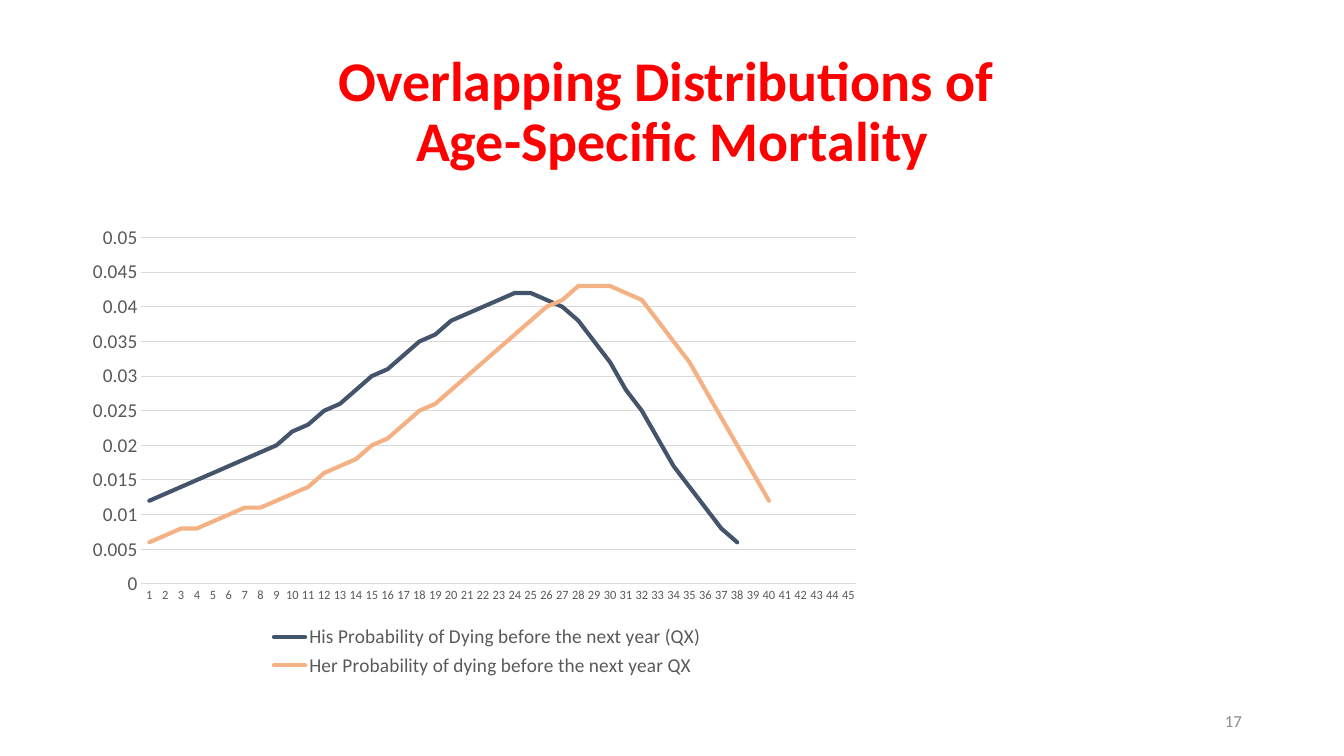
from dataclasses import dataclass

from lxml.etree import SubElement
from pptx import Presentation
from pptx.chart.data import CategoryChartData
from pptx.dml.color import RGBColor
from pptx.enum.chart import XL_CHART_TYPE, XL_LEGEND_POSITION, XL_TICK_MARK
from pptx.enum.text import MSO_ANCHOR, MSO_AUTO_SIZE, PP_ALIGN
from pptx.oxml.ns import qn
from pptx.util import Cm, Pt

FONT = "Calibri"
COLORS = {
    "title": "FF0000",
    "label": "595959",
    "grid": "D9D9D9",
    "page": "8C8C8C",
    "his": "44546A",
    "her": "F4B183",
}
AGES = range(1, 46)


@dataclass
class Curve:
    name: str
    color: str
    values: list[float]


CURVES = [
    Curve("His Probability of Dying before the next year (QX)", "his", [
        0.012, 0.013, 0.014, 0.015, 0.016, 0.017, 0.018, 0.019, 0.02, 0.022,
        0.023, 0.025, 0.026, 0.028, 0.03, 0.031, 0.033, 0.035, 0.036, 0.038,
        0.039, 0.04, 0.041, 0.042, 0.042, 0.041, 0.04, 0.038, 0.035, 0.032,
        0.028, 0.025, 0.021, 0.017, 0.014, 0.011, 0.008, 0.006]),
    Curve("Her Probability of dying before the next year QX", "her", [
        0.006, 0.007, 0.008, 0.008, 0.009, 0.01, 0.011, 0.011, 0.012, 0.013,
        0.014, 0.016, 0.017, 0.018, 0.02, 0.021, 0.023, 0.025, 0.026, 0.028,
        0.03, 0.032, 0.034, 0.036, 0.038, 0.04, 0.041, 0.043, 0.043, 0.043,
        0.042, 0.041, 0.038, 0.035, 0.032, 0.028, 0.024, 0.02, 0.016, 0.012]),
]


def rgb(name: str) -> RGBColor:
    return RGBColor.from_string(COLORS[name])


def style(font, size: float, color: str, bold: bool = False) -> None:
    font.name = FONT
    font.size = Pt(size)
    font.bold = bold
    font.color.rgb = rgb(color)


def write(shape, text: str, *, size: float, color: str, align: PP_ALIGN,
          bold: bool = False, spacing: float = 1.0) -> None:
    frame = shape.text_frame
    frame.word_wrap = True
    frame.auto_size = MSO_AUTO_SIZE.NONE
    frame.vertical_anchor = MSO_ANCHOR.MIDDLE
    para = frame.paragraphs[0]
    para.text = text
    para.alignment = align
    para.line_spacing = spacing
    for run in para.runs:
        style(run.font, size, color, bold)


def rule(line, color: str, width: float) -> None:
    line.color.rgb = rgb(color)
    line.width = Pt(width)


def place(chart, x: float, y: float, w: float, h: float) -> None:
    """Fix the inner plot area as fractions of the chart."""
    plot = chart._chartSpace.chart.plotArea
    for old in plot.findall(qn("c:layout")):
        plot.remove(old)
    layout = SubElement(plot, qn("c:layout"))
    plot.insert(0, layout)
    manual = SubElement(layout, qn("c:manualLayout"))
    parts = {"layoutTarget": "inner", "xMode": "edge", "yMode": "edge",
             "x": x, "y": y, "w": w, "h": h}
    for tag, value in parts.items():
        SubElement(manual, qn(f"c:{tag}")).set("val", str(value))


def plot_curves(slide) -> None:
    data = CategoryChartData()
    data.categories = [str(age) for age in AGES]
    for curve in CURVES:
        gap = [None] * (len(AGES) - len(curve.values))
        data.add_series(curve.name, curve.values + gap)
    chart = slide.shapes.add_chart(
        XL_CHART_TYPE.LINE, Cm(2.34), Cm(5.08), Cm(19.53), Cm(12.09), data).chart
    chart.has_title = False
    chart.font.name = FONT
    chart.font.size = Pt(10)
    place(chart, 0.045, 0.075, 0.94, 0.722)

    ages, odds = chart.category_axis, chart.value_axis
    for axis, size in ((ages, 9), (odds, 14)):
        axis.major_tick_mark = axis.minor_tick_mark = XL_TICK_MARK.NONE
        style(axis.tick_labels.font, size, "label")
    rule(ages.format.line, "grid", 0.75)
    odds.format.line.fill.background()
    odds.minimum_scale, odds.maximum_scale, odds.major_unit = 0, 0.05, 0.005
    rule(odds.major_gridlines.format.line, "grid", 0.75)

    chart.has_legend = True
    chart.legend.position = XL_LEGEND_POSITION.BOTTOM
    chart.legend.include_in_layout = False
    style(chart.legend.font, 14, "label")

    plot = chart.plots[0]
    plot.vary_by_categories = False
    for series, curve in zip(plot.series, CURVES):
        series.smooth = False
        rule(series.format.line, curve.color, 3)
        series.format.line._ln.set("cap", "rnd")


def main() -> None:
    deck = Presentation()
    deck.slide_width, deck.slide_height = Cm(33.87), Cm(19.05)
    slide = deck.slides.add_slide(deck.slide_layouts[5])

    title = slide.shapes.title
    title.left, title.top = Cm(2.34), Cm(1.02)
    title.width, title.height = Cm(29.21), Cm(3.68)
    write(title, "Overlapping Distributions of \vAge-Specific Mortality",
          size=40, color="title", align=PP_ALIGN.CENTER, bold=True, spacing=0.9)

    plot_curves(slide)

    page = slide.shapes.add_textbox(Cm(23.93), Cm(17.65), Cm(7.62), Cm(1.02))
    write(page, "17", size=12, color="page", align=PP_ALIGN.RIGHT)
    deck.save("out.pptx")


if __name__ == "__main__":
    main()
